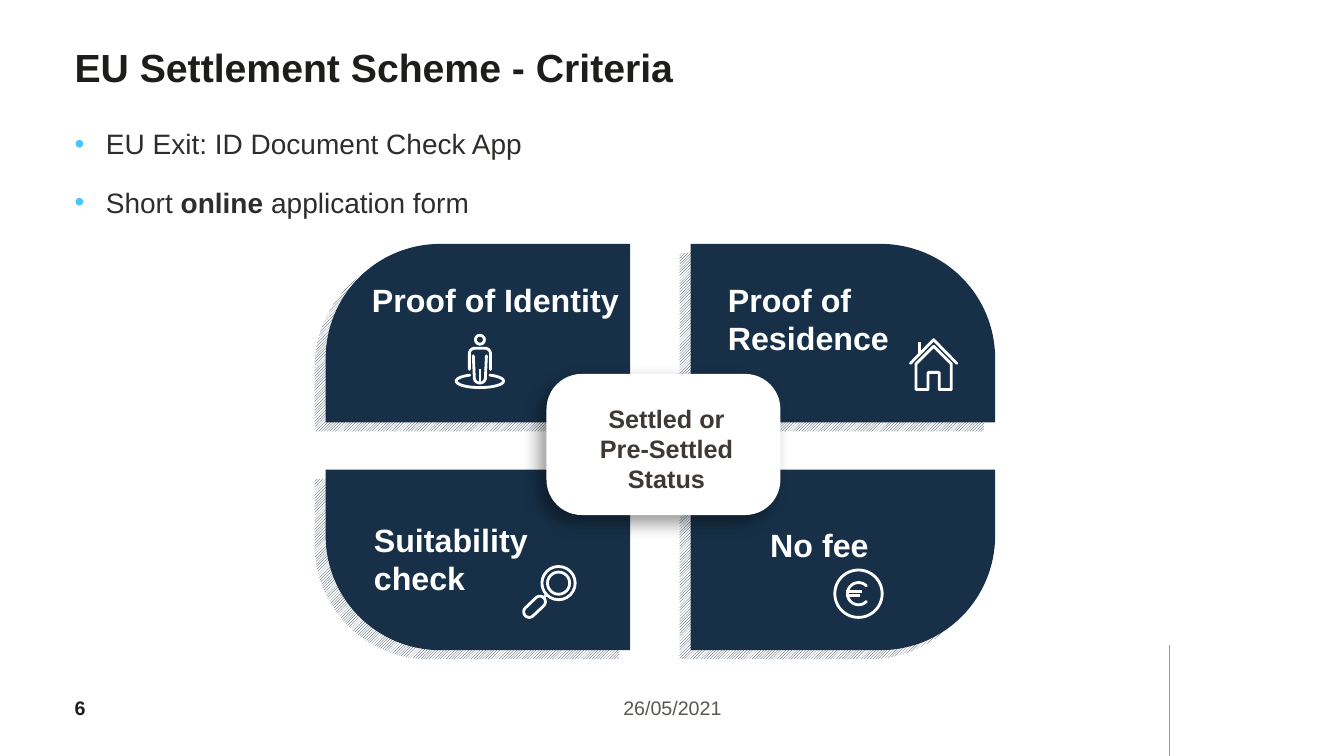
from math import cos, radians, sin

from lxml.etree import SubElement
from pptx import Presentation
from pptx.dml.color import RGBColor
from pptx.enum.dml import MSO_PATTERN
from pptx.enum.shapes import MSO_CONNECTOR, MSO_SHAPE
from pptx.enum.text import MSO_ANCHOR, PP_ALIGN
from pptx.oxml.ns import qn
from pptx.util import Inches, Pt

NAVY, WHITE, INK, BULLET = "173048", "FFFFFF", "1D1D1B", "44C8F5"
TITLE = "EU Settlement Scheme - Criteria"
POINTS = [
    [("EU Exit: ID Document Check App", False)],
    [("Short ", False), ("online ", True), ("application form", False)],
]
CRITERIA = [
    ("Proof of Identity", 3.59, 2.73, 2.73, 0.49),
    ("Proof of Residence", 7.12, 2.73, 2.32, 0.88),
    ("Suitability check", 3.61, 5.11, 2.32, 0.88),
    ("No fee", 7.54, 5.16, 2.32, 0.49),
]
OUTCOME = "Settled or Pre-Settled Status"
DATE, PAGE = "26/05/2021", "6"

COLUMNS, PETAL_WIDTH = (3.23, 6.85), 3.02
ROWS = ((2.42, 1.77), (4.66, 1.79))
PETAL_RADIUS = 1.135
HATCH_SHIFT = (-0.11, 0.09)


def arc(x, y, rx, ry, start, end, steps=32):
    angles = [radians(start + (end - start) * i / steps) for i in range(steps + 1)]
    return [(x + rx * cos(a), y + ry * sin(a)) for a in angles]


RINGS = [
    (4.76, 3.37, 0.045),
    (5.54, 5.785, 0.165),
    (5.54, 5.785, 0.11),
    (8.515, 5.89, 0.235),
]
BARS = [
    (4.76, 3.665, 4.76, 3.8),
    (9.12, 3.395, 9.12, 3.515),
    (5.4, 5.92, 5.42, 5.9),
    (8.39, 5.91, 8.53, 5.91),
    (8.39, 5.87, 8.55, 5.87),
]
ARMS = [(4.655, 3.665), *arc(4.71, 3.51, 0.055, 0.055, 180, 270),
        *arc(4.81, 3.51, 0.055, 0.055, 270, 360), (4.865, 3.665)]
LEGS = [(4.695, 3.53), *arc(4.76, 3.75, 0.055, 0.05, 180, 0), (4.825, 3.53)]
GROUND = arc(4.76, 3.78, 0.235, 0.065, -65, 245)
WALLS = [(9.085, 3.865), (9.205, 3.865), (9.205, 3.695), (9.315, 3.695), (9.315, 3.865),
         (9.435, 3.865), (9.435, 3.61), (9.26, 3.435), (9.085, 3.61)]
ROOF = [(9.03, 3.605), (9.26, 3.37), (9.49, 3.605)]
HANDLE = [*arc(5.25, 6.07, 0.055, 0.055, 45, 225), *arc(5.355, 5.97, 0.055, 0.055, 225, 405)]
EURO = arc(8.515, 5.89, 0.11, 0.11, 45, 315)
STROKES = [(ARMS, False), (LEGS, False), (GROUND, False), (WALLS, True),
           (ROOF, False), (HANDLE, True), (EURO, False)]

prs = Presentation()
prs.slide_width, prs.slide_height = Inches(13.33), Inches(7.5)
slide = prs.slides.add_slide(prs.slide_layouts[6])
shapes = slide.shapes


def color(value):
    return RGBColor.from_string(value)


def style(paragraph, size, ink, bold=None):
    font = paragraph.font
    font.name, font.size, font.bold = "Arial", Pt(size), bold
    font.color.rgb = color(ink)


def frame(left, top, width, height, inset=True):
    area = shapes.add_textbox(*map(Inches, (left, top, width, height))).text_frame
    area.word_wrap = True
    if not inset:
        area.margin_left = area.margin_right = area.margin_top = area.margin_bottom = 0
    return area


def label(words, box, size, ink, bold=True, align=PP_ALIGN.LEFT, inset=True):
    area = frame(*box, inset)
    paragraph = area.paragraphs[0]
    paragraph.text, paragraph.alignment = words, align
    style(paragraph, size, ink, bold)
    return area


def outline(points, closed):
    first, *rest = [(Inches(x), Inches(y)) for x, y in points]
    builder = shapes.build_freeform(*first)
    builder.add_line_segments(rest, close=closed)
    shape = builder.convert_to_shape()
    shape.shadow.inherit = False
    return shape


def white_stroke(shape):
    shape.fill.background()
    shape.line.color.rgb = color(WHITE)
    shape.line.width = Pt(2)
    line = shape.line._get_or_add_ln()
    line.set("cap", "rnd")
    SubElement(line, qn("a:round"))


def straight(x1, y1, x2, y2, ink, width):
    line = shapes.add_connector(MSO_CONNECTOR.STRAIGHT, *map(Inches, (x1, y1, x2, y2)))
    line.line.color.rgb, line.line.width = color(ink), Pt(width)
    SubElement(line._element.spPr, qn("a:effectLst"))


def petal(column, row, shift):
    left, (top, height) = COLUMNS[column] + shift[0], ROWS[row]
    top += shift[1]
    right, bottom = left + PETAL_WIDTH, top + height
    corners = [(left, top), (right, top), (right, bottom), (left, bottom)]
    turn = 3 - column if row else column
    x, y = corners[turn]
    r = PETAL_RADIUS
    center_x, center_y = (x - r if column else x + r), (y - r if row else y + r)
    start = 180 + 90 * turn
    corners[turn:turn + 1] = arc(center_x, center_y, r, r, start, start + 90)
    shape = outline(corners, True)
    shape.line.fill.background()
    return shape


label(DATE, (4.42, 6.86, 4.5, 0.34), 14, "585852", False, PP_ALIGN.CENTER)
straight(11.6, 6.4, 11.6, 7.5, "999999", 1.25)
label(PAGE, (0.74, 6.82, 0.74, 0.4), 14, INK, inset=False).vertical_anchor = MSO_ANCHOR.MIDDLE
label(TITLE, (0.74, 0.43, 10.66, 0.94), 28, INK, inset=False)

for shift in (HATCH_SHIFT, (0, 0)):
    for row in (1, 0):
        for column in (0, 1):
            fill = petal(column, row, shift).fill
            if shift == HATCH_SHIFT:
                fill.patterned()
                fill.pattern = MSO_PATTERN.DARK_UPWARD_DIAGONAL
                fill.fore_color.rgb, fill.back_color.rgb = color(NAVY), color(WHITE)
            else:
                fill.solid()
                fill.fore_color.rgb = color(NAVY)

hub = shapes.add_shape(MSO_SHAPE.ROUNDED_RECTANGLE, *map(Inches, (5.42, 3.71, 2.32, 1.4)))
hub.adjustments[0] = 0.25
hub.fill.solid()
hub.fill.fore_color.rgb = color(WHITE)
hub.line.fill.background()
hub.shadow.inherit = False
glow = SubElement(hub._element.spPr.find(qn("a:effectLst")), qn("a:outerShdw"),
                  blurRad=str(Pt(13)), dist=str(Pt(8)), dir=str(135 * 60000), rotWithShape="0")
SubElement(SubElement(glow, qn("a:srgbClr"), val="000000"), qn("a:alpha"), val="40000")

for words, *box in CRITERIA:
    label(words, box, 23, WHITE)
label(OUTCOME, (5.77, 3.95, 1.68, 1.01), 18, "3E3935", align=PP_ALIGN.CENTER)

for x, y, r in RINGS:
    ring = shapes.add_shape(MSO_SHAPE.OVAL, *map(Inches, (x - r, y - r, 2 * r, 2 * r)))
    ring.shadow.inherit = False
    white_stroke(ring)
for points, closed in STROKES:
    white_stroke(outline(points, closed))
for bar in BARS:
    straight(*bar, WHITE, 2)

points_frame = frame(0.74, 1.09, 10.86, 4.13, inset=False)
for i, runs in enumerate(POINTS):
    paragraph = points_frame.add_paragraph() if i else points_frame.paragraphs[0]
    props = paragraph._p.get_or_add_pPr()
    props.set("marL", str(Inches(0.31)))
    props.set("indent", str(-Inches(0.31)))
    SubElement(SubElement(props, qn("a:buClr")), qn("a:srgbClr"), val=BULLET)
    SubElement(props, qn("a:buFont"), typeface="Arial")
    SubElement(props, qn("a:buChar"), char="•")
    paragraph.line_spacing, paragraph.space_after = 1.5, Pt(6)
    style(paragraph, 20, "2D2D2C")
    for words, bold in runs:
        run = paragraph.add_run()
        run.text = words
        if bold:
            run.font.bold = True

prs.save("out.pptx")
